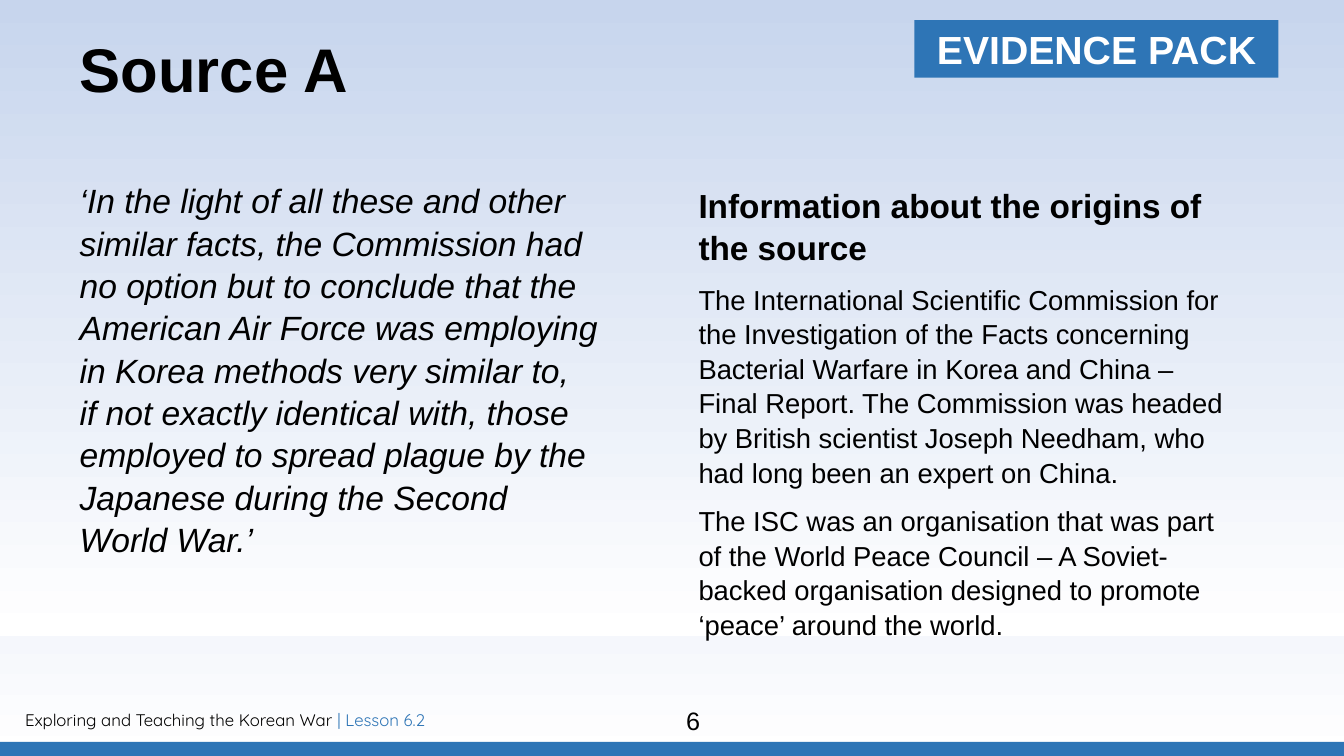
from pptx import Presentation
from pptx.dml.color import RGBColor
from pptx.enum.shapes import MSO_SHAPE
from pptx.enum.text import MSO_ANCHOR, MSO_AUTO_SIZE, PP_ALIGN
from pptx.util import Inches, Pt

RECT = MSO_SHAPE.RECTANGLE
TOP, MIDDLE = MSO_ANCHOR.TOP, MSO_ANCHOR.MIDDLE
LEFT, CENTER = PP_ALIGN.LEFT, PP_ALIGN.CENTER
FIXED = MSO_AUTO_SIZE.NONE
COLORS = {"black": "000000", "white": "FFFFFF", "blue": "2E75B6",
          "sky": "B4C7E7", "haze": "C7D5ED"}


def shade(fill, tone):
    fill.gradient()
    fill.gradient_angle = 90
    for stop, name in zip(fill.gradient_stops, ("white", tone)):
        stop.color.rgb = RGBColor.from_string(COLORS[name])


def write(para, text, size, color="black", face="Arial", bold=False, italic=False):
    run = para.add_run()
    run.text = text
    font = run.font
    font.name, font.size = face, Pt(size)
    font.bold, font.italic = bold, italic
    font.color.rgb = RGBColor.from_string(COLORS[color])


deck = Presentation()
deck.slide_width, deck.slide_height = Inches(13.33), Inches(7.5)
slide = deck.slides.add_slide(deck.slide_layouts[5])
shapes = slide.shapes
shade(slide.background.fill, "sky")

bars = []
for left, top, width, height in ((0, 7.36, 13.33, 0.15), (0, 0, 13.33, 6.31),
                                 (9.07, 0.2, 3.61, 0.57)):
    bar = shapes.add_shape(RECT, Inches(left), Inches(top), Inches(width), Inches(height))
    bar.shadow.inherit = False
    bar.line.fill.background()
    bar.fill.solid()
    bar.fill.fore_color.rgb = RGBColor.from_string(COLORS["blue"])
    bars.append(bar)
strip, panel, badge = bars
shade(panel.fill, "haze")

label = badge.text_frame
label.vertical_anchor = MIDDLE
label.paragraphs[0].alignment = CENTER
write(label.paragraphs[0], "EVIDENCE PACK", 28, "white", bold=True)

title = shapes.title
panel._element.addnext(title._element)
title.left, title.top = Inches(0.79), Inches(0.39)
title.width, title.height = Inches(11.5), Inches(1.45)

frames = []
for left, top, width, height in ((0.79, 1.77, 5.37, 4.76), (6.83, 1.77, 5.46, 5.08),
                                 (0.15, 6.99, 7.82, 0.3), (4.32, 6.95, 5.11, 0.4)):
    box = shapes.add_textbox(Inches(left), Inches(top), Inches(width), Inches(height))
    box.text_frame.word_wrap = True
    frames.append(box.text_frame)
quote, origin, footer, number = frames

head = title.text_frame
for frame in (head, quote):
    frame.margin_left = frame.margin_right = 0
    frame.margin_top = frame.margin_bottom = 0
head.auto_size = FIXED
head.vertical_anchor = TOP
head.paragraphs[0].alignment = LEFT
head.paragraphs[0].line_spacing = 0.9
write(head.paragraphs[0], "Source A", 44, bold=True)

lines = (
    "‘In the light of all these and other similar facts, the Commission had no option "
    "but to conclude that the American Air Force was employing in Korea methods very "
    "similar to, ",
    "if not exactly identical with, those employed to spread plague by the Japanese "
    "during the Second ",
    "World War.’",
)
para = quote.paragraphs[0]
para.line_spacing = 1.05
for i, line in enumerate(lines):
    if i:
        para.add_line_break()
    write(para, line, 24, italic=True)

notes = (
    ("Information about the origins of the source", 23.8, True),
    ("The International Scientific Commission for the Investigation of the Facts "
     "concerning Bacterial Warfare in Korea and China – Final Report. The Commission "
     "was headed by British scientist Joseph Needham, who had long been an expert on "
     "China.", 19.6, False),
    ("The ISC was an organisation that was part of the World Peace Council – A "
     "Soviet-backed organisation designed to promote ‘peace’ around the world.",
     19.6, False),
)
for i, (text, size, bold) in enumerate(notes):
    para = origin.add_paragraph() if i else origin.paragraphs[0]
    para.line_spacing = 1.05
    if i:
        para.space_before = Pt(10)
    write(para, text, size, bold=bold)

write(footer.paragraphs[0], "Exploring and Teaching the Korean War ", 12, face="Quicksand")
write(footer.paragraphs[0], "| Lesson 6.2", 12, "blue", "Quicksand")
number.paragraphs[0].alignment = CENTER
write(number.paragraphs[0], "6", 18)

deck.save("out.pptx")
